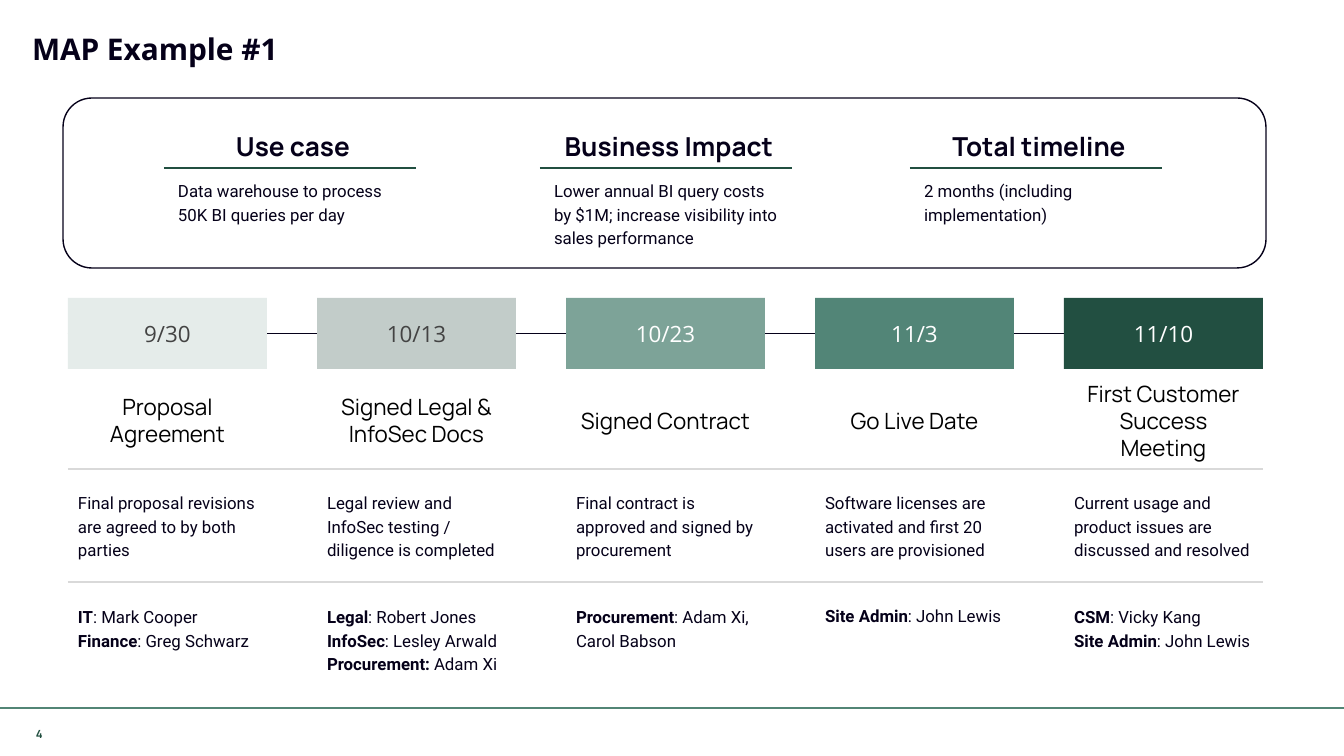
import pptx
import pptx.util
import pptx.dml.color
import pptx.enum.shapes
import pptx.enum.text
import pptx.oxml

EMU_PER_PX = 914400 / 134.4
COLORS = {
    "ink": "050019", "black": "000000", "white": "FFFFFF", "gray": "434343",
    "rule": "D9D9D9", "forest": "214F40", "footer": "528575",
}
STEP_LEFT, STEP_PITCH, STEP_WIDTH = 68, 249, 199
RULE_RIGHT = 1263

SUMMARY = [
    (164, "Use case", "Data warehouse to process 50K BI queries per day"),
    (540, "Business Impact",
     "Lower annual BI query costs by $1M; increase visibility into sales performance"),
    (910, "Total timeline", "2 months (including implementation)"),
]
STEPS = [
    ("9/30", "E5ECEA", "gray", "Proposal Agreement",
     "Final proposal revisions are agreed to by both parties",
     [("IT", ": Mark Cooper"), ("Finance", ": Greg Schwarz")]),
    ("10/13", "C2CCC9", "gray", "Signed Legal & InfoSec Docs",
     "Legal review and InfoSec testing / diligence is completed",
     [("Legal", ": Robert Jones"), ("InfoSec", ": Lesley Arwald"),
      ("Procurement:", " Adam Xi")]),
    ("10/23", "7DA398", "white", "Signed Contract",
     "Final contract is approved and signed by procurement",
     [("Procurement", ": Adam Xi, Carol Babson")]),
    ("11/3", "528577", "white", "Go Live Date",
     "Software licenses are activated and first 20 users are provisioned",
     [("Site Admin", ": John Lewis")]),
    ("11/10", "224F41", "white", "First Customer Success Meeting",
     "Current usage and product issues are discussed and resolved",
     [("CSM", ": Vicky Kang"), ("Site Admin", ": John Lewis")]),
]


def px(length):
    return pptx.util.Emu(round(length * EMU_PER_PX))


def rgb(value):
    return pptx.dml.color.RGBColor.from_string(value)


def add_run(para, text, font, size, color, bold=False):
    span = para.add_run()
    span.text = text
    span.font.name = font
    span.font.size = pptx.util.Pt(size)
    span.font.bold = bold
    span.font.color.rgb = rgb(COLORS[color])


def prepare_frame(box, inset=13, side=None, middle=False, centered=False):
    frame = box.text_frame
    frame.word_wrap = True
    frame.margin_top = frame.margin_bottom = px(inset)
    frame.margin_left = frame.margin_right = px(side or inset)
    anchors = pptx.enum.text.MSO_ANCHOR
    frame.vertical_anchor = anchors.MIDDLE if middle else anchors.TOP
    para = frame.paragraphs[0]
    alignments = pptx.enum.text.PP_ALIGN
    para.alignment = alignments.CENTER if centered else alignments.LEFT
    return para


def add_text(page, bounds, **layout):
    return prepare_frame(page.shapes.add_textbox(*map(px, bounds)), **layout)


def add_note(page, bounds, lines):
    para = add_text(page, bounds)
    para.line_spacing = 1.15
    para.space_after = pptx.util.Pt(16)
    for index, (lead, rest) in enumerate(lines):
        if index:
            para.add_line_break()
        if lead:
            add_run(para, lead, "Roboto", 9, "ink", True)
        add_run(para, rest, "Roboto", 9, "ink")


def add_block(page, bounds, fill, text, font, color):
    block = page.shapes.add_shape(
        pptx.enum.shapes.MSO_SHAPE.RECTANGLE, *map(px, bounds))
    block.shadow.inherit = False
    block.fill.solid()
    block.fill.fore_color.rgb = rgb(fill)
    block.line.fill.background()
    para = prepare_frame(block, middle=True, centered=True)
    add_run(para, text, font, 12, color)
    return block


def add_rule(page, left, right, y, color, width=0.75):
    rule = page.shapes.add_connector(
        pptx.enum.shapes.MSO_CONNECTOR.STRAIGHT, px(left), px(y), px(right), px(y))
    rule.line.color.rgb = rgb(COLORS[color])
    rule.line.width = pptx.util.Pt(width)
    rule._element.spPr.append(pptx.oxml.parse_xml(
        '<a:effectLst xmlns:a="http://schemas.openxmlformats.org/drawingml/2006/main"/>'))
    return rule


def add_timeline(page):
    axis = add_rule(page, STEP_LEFT, RULE_RIGHT, 334, "ink")
    dates = []
    for index, (date, fill, color, name, detail, owners) in enumerate(STEPS):
        left = STEP_LEFT + index * STEP_PITCH
        dates.append(add_block(
            page, (left, 298, STEP_WIDTH, 71), fill, date, "Open Sans", color))
        add_block(page, (left, 391, STEP_WIDTH, 59), COLORS["white"],
                  name, "Manrope", "black")
        add_note(page, (left - 3, 477, 204, 94), [("", detail)])
        add_note(page, (left - 3, 591, 204, 94), owners)
    axis.begin_connect(dates[0], 1)
    axis.end_connect(dates[-1], 3)
    for y in (469, 582):
        add_rule(page, STEP_LEFT, RULE_RIGHT, y, "rule")


def add_summary(page):
    for left, heading, body in SUMMARY:
        add_rule(page, left, left + 252, 168, "forest")
        para = add_text(page, (left + 3, 117, 252, 59), centered=True)
        add_run(para, heading, "Manrope", 14, "ink", True)
        add_note(page, (left + 1, 165, 252, 94), [("", body)])
    border = page.shapes.add_shape(
        pptx.enum.shapes.MSO_SHAPE.ROUNDED_RECTANGLE, *map(px, (63, 98, 1203, 170)))
    border.shadow.inherit = False
    border.adjustments[0] = 0.17
    border.fill.background()
    border.line.color.rgb = rgb(COLORS["ink"])
    border.line.width = pptx.util.Pt(0.75)


def main():
    deck = pptx.Presentation()
    deck.slide_width, deck.slide_height = px(1344), px(756)
    page = deck.slides.add_slide(deck.slide_layouts[6])

    number = add_text(page, (31, 722, 23, 24), inset=5, middle=True)
    add_run(number, "4", "Manrope", 6, "forest", True)
    add_rule(page, 0, 1344, 708, "footer", 1)
    title = add_text(page, (22, 21, 1158, 59), inset=5, side=10, middle=True)
    title.line_spacing = 0.9
    add_run(title, "MAP Example #1", "Open Sans", 16, "ink", True)

    add_timeline(page)
    add_summary(page)
    deck.save("out.pptx")


if __name__ == "__main__":
    main()
